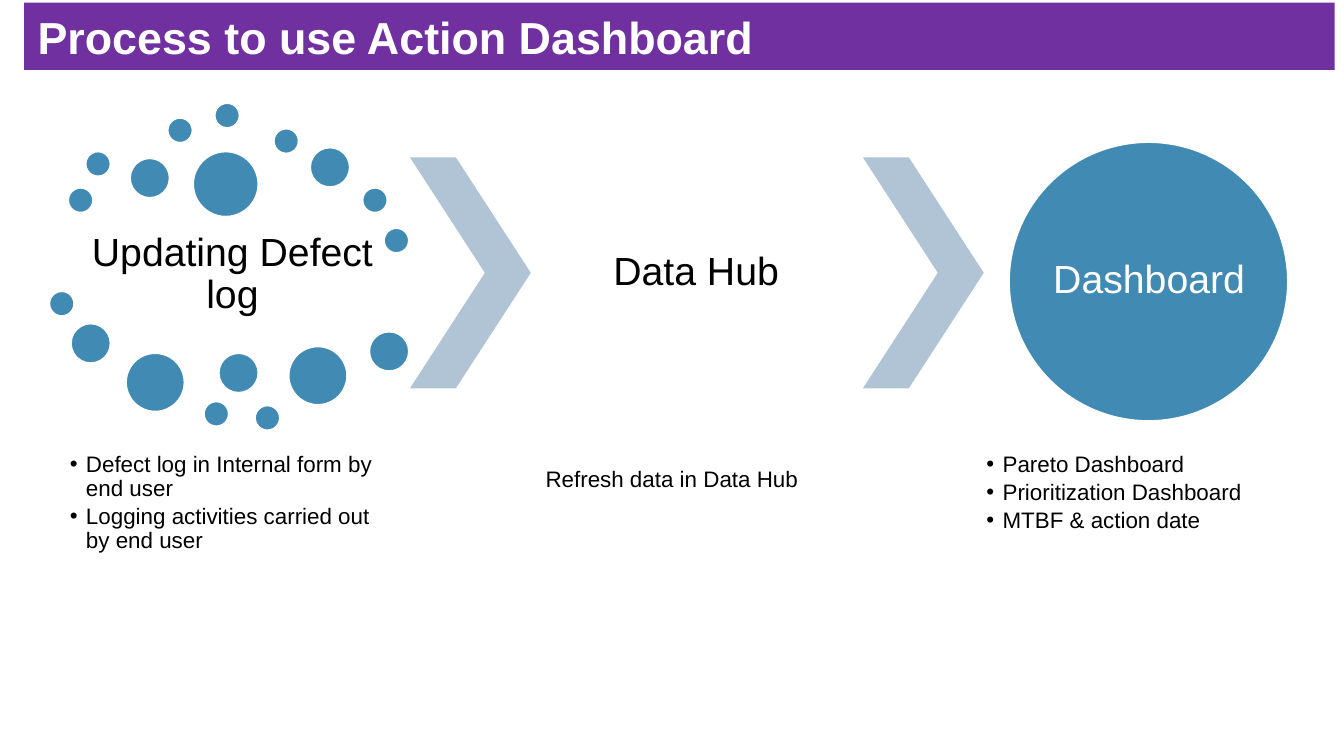
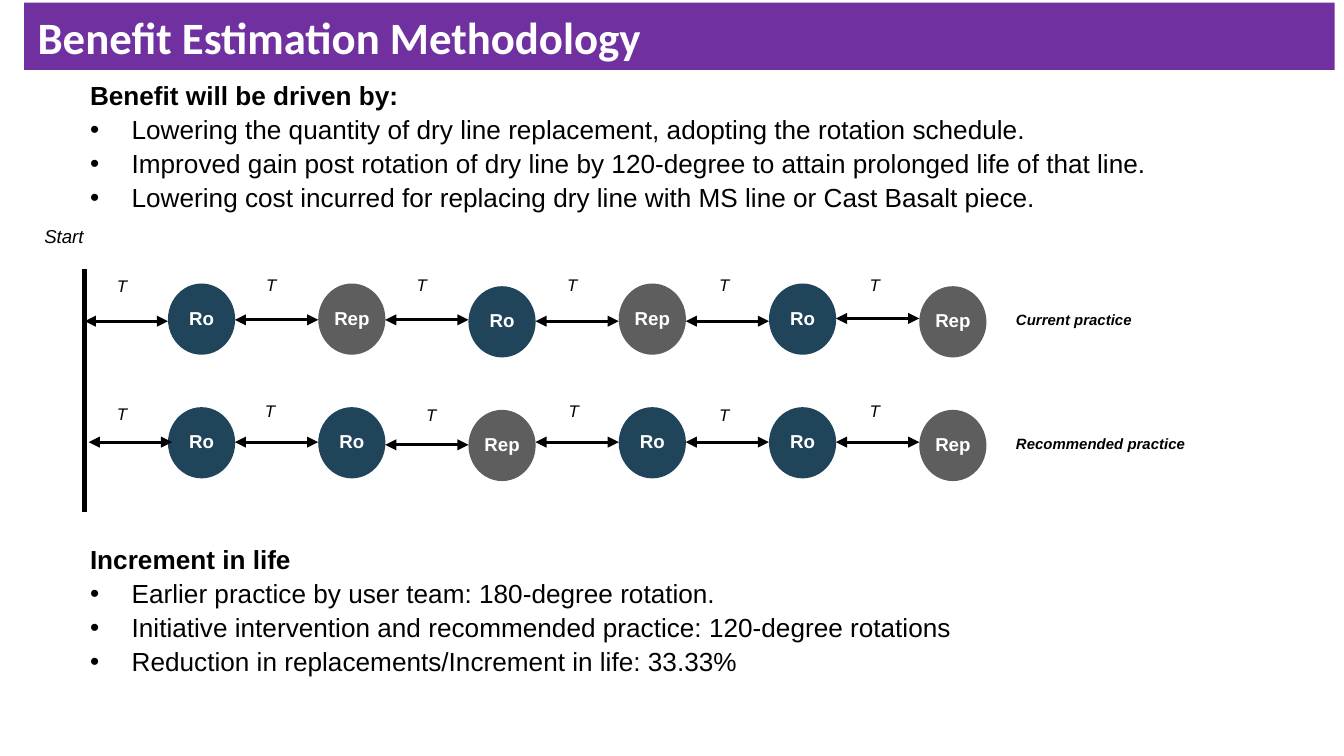
from lxml import etree
from pptx import Presentation
from pptx.dml.color import RGBColor
from pptx.enum import shapes, text
from pptx.oxml import ns
from pptx.util import Inches, Pt

PURPLE = RGBColor(0x70, 0x30, 0xA0)
BLUE = RGBColor(0x41, 0x8A, 0xB3)
PALE_BLUE = RGBColor(0xB0, 0xC4, 0xD6)
NAVY = RGBColor(0x20, 0x45, 0x5A)
GREY = RGBColor(0x5E, 0x5E, 0x5E)
BLACK = RGBColor(0, 0, 0)
WHITE = RGBColor(255, 255, 255)

LEFT, CENTER = text.PP_ALIGN.LEFT, text.PP_ALIGN.CENTER
TOP, MIDDLE = text.MSO_ANCHOR.TOP, text.MSO_ANCHOR.MIDDLE
OVAL, CHEVRON = shapes.MSO_SHAPE.OVAL, shapes.MSO_SHAPE.CHEVRON


def write(sp, lines, size, color=BLACK, align=LEFT, anchor=TOP, inset=0, wrap=True,
          indent=0, before=0, after=0, heading=False, **font):
    """Fill a shape with paragraphs; an indent bullets all but a bold heading."""
    tf = sp.text_frame
    tf.word_wrap, tf.vertical_anchor = wrap, anchor
    for side in ("left", "top", "right", "bottom"):
        setattr(tf, f"margin_{side}", Inches(inset))
    for i, line in enumerate(lines):
        p = tf.paragraphs[0] if i == 0 else tf.add_paragraph()
        is_heading = heading and i == 0
        if indent and not is_heading:
            pPr = p._p.get_or_add_pPr()
            pPr.set("marL", str(Inches(indent)))
            pPr.set("indent", str(-Inches(indent)))
            etree.SubElement(pPr, ns.qn("a:buFont")).set("typeface", "Arial")
            etree.SubElement(pPr, ns.qn("a:buChar")).set("char", "•")
        p.alignment, p.line_spacing = align, 0.9
        if before and i:
            p.space_before = Pt(before)
        if after:
            p.space_after = Pt(after)
        r = p.add_run()
        r.text = line
        r.font.color.rgb = color
        style = {"name": "Arial", "size": Pt(size), "bold": is_heading, **font}
        for name, value in style.items():
            setattr(r.font, name, value)


def add_shape(s, kind, x, y, w, h, fill, outline=None):
    sp = s.shapes.add_shape(kind, Inches(x), Inches(y), Inches(w), Inches(h))
    sp.shadow.inherit = False
    sp.fill.solid()
    sp.fill.fore_color.rgb = fill
    if outline is None:
        sp.line.fill.background()
    else:
        sp.line.color.rgb = outline
        sp.line.width = Pt(2)
    return sp


prs = Presentation()
prs.slide_width = Inches(10)
prs.slide_height = prs.slide_width * 9 // 16

slides = []
for title, font_name in (("Process to use Action Dashboard", "Arial"),
                         ("Benefit Estimation Methodology", "Calibri")):
    s = prs.slides.add_slide(prs.slide_layouts[5])
    band = s.shapes.title
    band.left, band.top = Inches(0.18), Inches(0.02)
    band.width, band.height = Inches(9.75), Inches(0.5)
    band.fill.solid()
    band.fill.fore_color.rgb = PURPLE
    tf = band.text_frame
    tf.auto_size = text.MSO_AUTO_SIZE.NONE
    tf.vertical_anchor = MIDDLE
    p = tf.paragraphs[0]
    p.alignment = LEFT
    r = p.add_run()
    r.text = title
    r.font.color.rgb = WHITE
    for name, value in {"name": font_name, "size": Pt(24), "bold": True}.items():
        setattr(r.font, name, value)
    slides.append(s)
process, benefit = slides

# Process: scattered dots, two chevrons and the dashboard circle
dots = {
    0.2: [(0.5, 1.39), (0.63, 1.12), (1.24, 0.87), (1.59, 0.76), (2.03, 0.95),
          (2.69, 1.39), (2.85, 1.69), (0.36, 2.16), (1.51, 2.98), (1.89, 3.01)],
    0.31: [(0.96, 1.17), (2.3, 1.09), (0.52, 2.4), (1.62, 2.62), (2.74, 2.46)],
    0.45: [(0.93, 2.62), (2.14, 2.57)],
    0.5: [(1.43, 1.12)],
}
for size, places in dots.items():
    for x, y in places:
        add_shape(process, OVAL, x, y, size, size, BLUE, WHITE)

for x in (3.05, 6.42):
    chevron = add_shape(process, CHEVRON, x, 1.17, 0.9, 1.72, PALE_BLUE)
    chevron.adjustments[0] = 0.62

add_shape(process, OVAL, 7.5, 1.05, 2.09, 2.09, BLUE, WHITE)

step = {"size": 21, "align": CENTER, "anchor": MIDDLE, "inset": 0.03}
on_circle = {**step, "inset": 0, "color": WHITE}
note = {"size": 12, "align": CENTER, "anchor": MIDDLE, "inset": 0.02}
bullets = {"size": 12, "inset": 0.02, "indent": 0.12, "after": 2}
for x, y, w, h, lines, style in (
    (0.5, 1.64, 2.46, 0.81, ["Updating Defect log"], step),
    (3.95, 1.17, 2.46, 1.72, ["Data Hub"], step),
    (7.81, 1.35, 1.48, 1.48, ["Dashboard"], on_circle),
    (3.77, 2.81, 2.46, 1.52, ["Refresh data in Data Hub"], note),
    (0.5, 3.35, 2.46, 1.52, ["Defect log in Internal form by end user",
                             "Logging activities carried out by end user"], bullets),
    (7.32, 3.35, 2.46, 1.52, ["Pareto Dashboard", "Prioritization Dashboard",
                              "MTBF & action date"], bullets),
):
    box = process.shapes.add_textbox(Inches(x), Inches(y), Inches(w), Inches(h))
    write(box, lines, **style)

# Benefit: two lists around a pair of timelines
for y, h, lines in (
    (0.62, 1.03, ["Benefit will be driven by:",
                  "Lowering the quantity of dry line replacement, adopting the rotation schedule.",
                  "Improved gain post rotation of dry line by 120-degree to attain prolonged life of that line.",
                  "Lowering cost incurred for replacing dry line with MS line or Cast Basalt piece."]),
    (4.07, 1.13, ["Increment in life",
                  "Earlier practice by user team: 180-degree rotation.",
                  "Initiative intervention and recommended practice: 120-degree rotations",
                  "Reduction in replacements/Increment in life: 33.33%"]),
):
    box = benefit.shapes.add_textbox(Inches(0.67), Inches(y), Inches(8.5), Inches(h))
    write(box, lines, 14, indent=0.31, before=3, heading=True)

NODE_W, NODE_H, GAP = 0.5, 0.53, 0.62
FIRST_X, LAST_X = 1.25, 6.84
node_fill = {"Ro": NAVY, "Rep": GREY}
lines = [(0.63, 2, 0.63, 3.81, 3)]
labels = [("Start", 0.33, 1.69, 0.49, 10, False)]
timelines = (
    ("Current practice", 2.11, 2.33, 1.03, ("Ro", "Rep", "Ro", "Rep", "Ro", "Rep"),
     (2.39, 2.38, 2.38, 2.39, 2.39, 2.37), 0,
     (0.87, 1.98, 3.1, 4.22, 5.35, 6.47), (2.07, 2.06, 2.06, 2.06, 2.06, 2.06)),
    ("Recommended practice", 3.03, 3.25, 1.7, ("Ro", "Ro", "Rep", "Ro", "Ro", "Rep"),
     (3.29, 3.29, 3.31, 3.29, 3.29, 3.29), 0.03,
     (0.87, 1.97, 3.17, 4.23, 5.35, 6.47), (3.02, 3, 3.03, 3, 3.03, 3)),
)
for practice, node_y, label_y, label_w, nodes, arrow_ys, start_shift, t_xs, t_ys in timelines:
    for i, node in enumerate(nodes):
        x = FIRST_X + i * (LAST_X - FIRST_X) / 5
        y = node_y + (0.02 if i in (2, 5) else 0)
        oval = add_shape(benefit, OVAL, x, y, NODE_W, NODE_H, node_fill[node])
        write(oval, [node], 10, WHITE, CENTER, MIDDLE, wrap=False, bold=True)
        tip = x + (start_shift if i == 0 else 0)
        lines.append((tip - GAP, arrow_ys[i], tip, arrow_ys[i], 1.5))
        labels.append(("T", t_xs[i], t_ys[i], 0.28, 9, False))
    labels.append((practice, 7.56, label_y, label_w, 8, True))

for x1, y1, x2, y2, width in lines:
    line = benefit.shapes.add_connector(
        shapes.MSO_CONNECTOR.STRAIGHT, Inches(x1), Inches(y1), Inches(x2), Inches(y2))
    line.line.color.rgb = BLACK
    line.line.width = Pt(width)
    if y1 == y2:
        ln = line.line._get_or_add_ln()
        for end in ("a:headEnd", "a:tailEnd"):
            etree.SubElement(ln, ns.qn(end)).set("type", "triangle")
    etree.SubElement(line._element.spPr, ns.qn("a:effectLst"))

for label, x, y, w, size, bold in labels:
    box = benefit.shapes.add_textbox(Inches(x), Inches(y), Inches(w), Inches(0.25))
    write(box, [label], size, bold=bold, italic=True)

prs.save("out.pptx")
